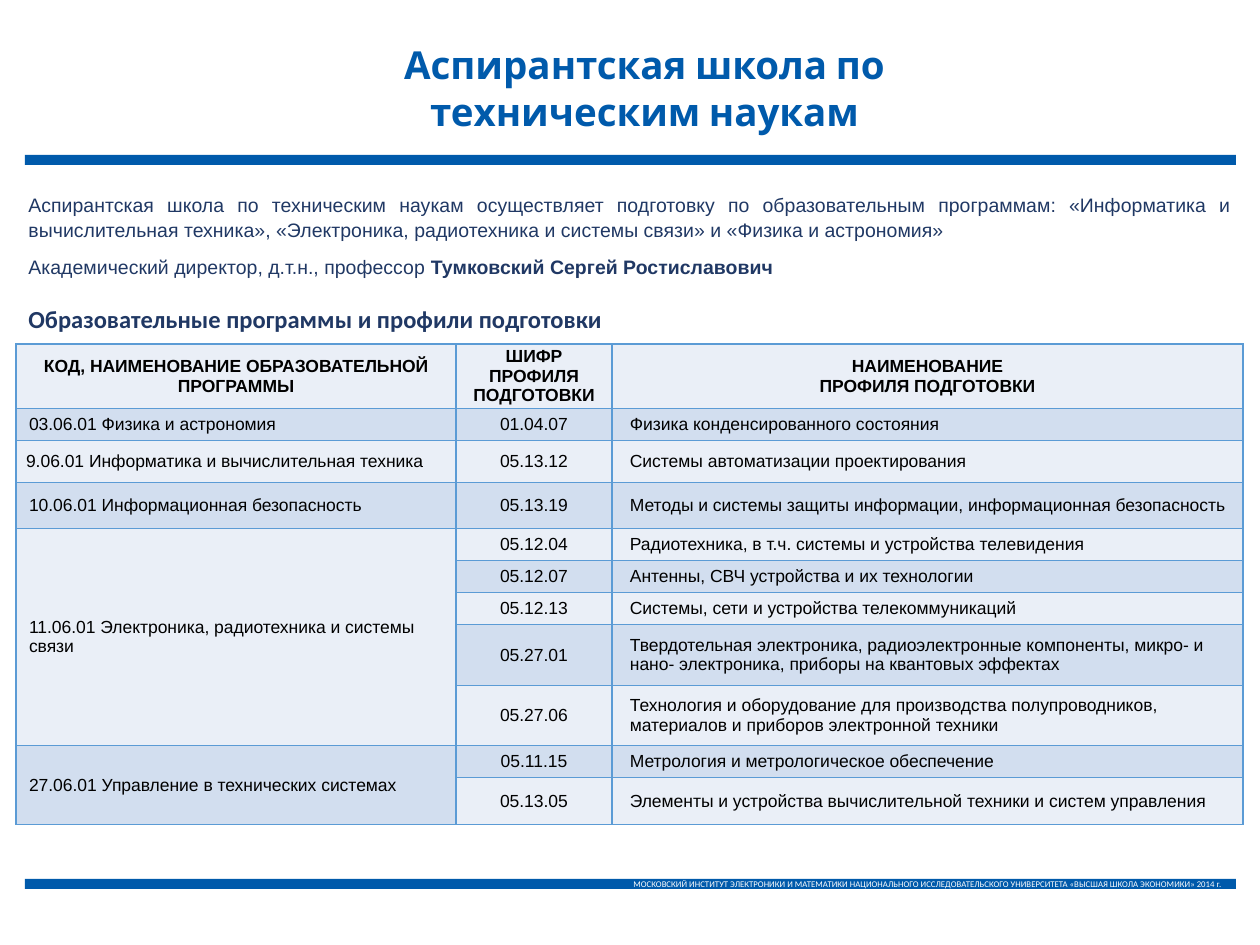
"""Build the slide on the postgraduate school of technical sciences."""
from copy import deepcopy
from dataclasses import dataclass

from lxml import etree
from pptx import Presentation
from pptx.dml.color import RGBColor
from pptx.enum.shapes import MSO_SHAPE
from pptx.enum.text import MSO_ANCHOR, MSO_AUTO_SIZE, PP_ALIGN
from pptx.oxml.ns import qn
from pptx.util import Emu, Pt

RECTANGLE = MSO_SHAPE.RECTANGLE
TOP, MIDDLE = MSO_ANCHOR.TOP, MSO_ANCHOR.MIDDLE
LEFT, CENTER, RIGHT, JUSTIFY = PP_ALIGN.LEFT, PP_ALIGN.CENTER, PP_ALIGN.RIGHT, PP_ALIGN.JUSTIFY
FIXED = MSO_AUTO_SIZE.NONE
SCALE = 914400 / 126
TITLE_ONLY = 5


@dataclass(frozen=True)
class Theme:
    brand: str = "005AAB"
    ink: str = "203864"
    black: str = "000000"
    white: str = "FFFFFF"
    light: str = "EAEFF7"
    dark: str = "D2DEEF"
    border: str = "5B9BD5"
    sans: str = "Arial"
    heading: str = "Cabin"
    label: str = "Calibri"
    title_size: float = 22
    subtitle_size: float = 14
    intro_size: float = 11.1
    table_size: float = 10
    footer_size: float = 5


THEME = Theme()

TITLE = "Аспирантская школа по\nтехническим наукам"
INTRO = [
    [("Аспирантская школа по техническим наукам осуществляет подготовку по образовательным "
      "программам: «Информатика и вычислительная техника», «Электроника, радиотехника и "
      "системы связи» и «Физика и астрономия»", False)],
    [("Академический директор, д.т.н., профессор ", False),
     ("Тумковский Сергей Ростиславович", True)],
]
SUBTITLE = "Образовательные программы и профили подготовки"
FOOTER = ("МОСКОВСКИЙ ИНСТИТУТ ЭЛЕКТРОНИКИ И МАТЕМАТИКИ НАЦИОНАЛЬНОГО ИССЛЕДОВАТЕЛЬСКОГО "
          "УНИВЕРСИТЕТА «ВЫСШАЯ ШКОЛА ЭКОНОМИКИ» 2014 г.")
HEADERS = [
    ["КОД, НАИМЕНОВАНИЕ ОБРАЗОВАТЕЛЬНОЙ ПРОГРАММЫ"],
    ["ШИФР ПРОФИЛЯ ПОДГОТОВКИ"],
    ["НАИМЕНОВАНИЕ", "ПРОФИЛЯ ПОДГОТОВКИ"],
]
PROGRAMMES = [
    ("03.06.01 Физика и астрономия", 3, [
        ("01.04.07", "Физика конденсированного состояния", 32)]),
    ("9.06.01 Информатика и вычислительная техника", 0, [
        ("05.13.12", "Системы автоматизации проектирования", 42)]),
    ("10.06.01 Информационная безопасность", 3, [
        ("05.13.19", "Методы и системы защиты информации, информационная безопасность", 46)]),
    ("11.06.01 Электроника, радиотехника и системы связи", 3, [
        ("05.12.04", "Радиотехника, в т.ч. системы и устройства телевидения", 32),
        ("05.12.07", "Антенны, СВЧ устройства и их технологии", 32),
        ("05.12.13", "Системы, сети и устройства телекоммуникаций", 32),
        ("05.27.01", "Твердотельная электроника, радиоэлектронные компоненты, микро- и "
                     "нано- электроника, приборы на квантовых эффектах", 61),
        ("05.27.06", "Технология и оборудование для производства полупроводников, "
                     "материалов и приборов электронной техники", 60)]),
    ("27.06.01 Управление в технических системах", 3, [
        ("05.11.15", "Метрология и метрологическое обеспечение", 32),
        ("05.13.05", "Элементы и устройства вычислительной техники и систем управления", 47)]),
]
COLUMN_WIDTHS = [440, 156, 631]
HEADER_HEIGHT = 60


def px(value):
    """Turn px into EMU."""
    return Emu(round(value * SCALE))


def write(frame, paragraphs, size, font, color, bold=False, align=LEFT, indent=0,
          line_spacing=None, space_after=None):
    """Fill a text frame with paragraphs, each a string or a list of (text, bold) spans."""
    for index, content in enumerate(paragraphs):
        para = frame.paragraphs[0] if index == 0 else frame.add_paragraph()
        para.alignment = align
        if line_spacing:
            para.line_spacing = line_spacing
        if space_after:
            para.space_after = Pt(space_after)
        if indent:
            properties = para._p.get_or_add_pPr()
            properties.set("marL", str(px(indent)))
            properties.set("indent", "0")
        spans = [(content, bold)] if isinstance(content, str) else content
        for text, strong in spans:
            for line_number, line in enumerate(text.split("\n")):
                if line_number:
                    para.add_line_break()
                span = para.add_run()
                span.text = line
                span.font.size = Pt(size)
                span.font.name = font
                span.font.bold = strong
                span.font.color.rgb = RGBColor.from_string(color)
        for line_break in para._p.findall(qn("a:br")):
            line_break.append(deepcopy(para.runs[0]._r.rPr))


def set_frame(frame, anchor=TOP, wrap=True):
    """Fix the size, anchor and wrapping of a text frame."""
    frame.auto_size = FIXED
    frame.vertical_anchor = anchor
    frame.word_wrap = wrap
    return frame


def place(shape, left, top, width, height):
    """Move and size a shape given px."""
    shape.left, shape.top, shape.width, shape.height = map(px, (left, top, width, height))


def add_text(page, bounds, paragraphs, anchor=TOP, wrap=True, **style):
    """Add a text box."""
    box = page.shapes.add_textbox(*map(px, bounds))
    write(set_frame(box.text_frame, anchor, wrap), paragraphs, **style)


def add_bar(page, top):
    """Add a full-width brand bar."""
    bar = page.shapes.add_shape(RECTANGLE, px(25), px(top), px(1211), px(10))
    bar.shadow.inherit = False
    bar.fill.solid()
    bar.fill.fore_color.rgb = RGBColor.from_string(THEME.brand)
    bar.line.fill.background()
    return bar


def format_cell(cell, fill, inset=3):
    """Give a cell its borders, fill, insets and anchor."""
    properties = cell._tc.get_or_add_tcPr()
    for side in ("lnL", "lnR", "lnT", "lnB"):
        line = etree.SubElement(properties, qn(f"a:{side}"), w=str(Pt(1)))
        solid = etree.SubElement(line, qn("a:solidFill"))
        etree.SubElement(solid, qn("a:srgbClr"), val=THEME.border)
    cell.fill.solid()
    cell.fill.fore_color.rgb = RGBColor.from_string(fill)
    cell.margin_left = cell.margin_right = cell.margin_top = cell.margin_bottom = px(inset)
    cell.vertical_anchor = MIDDLE


def add_programme_table(page):
    """Add the table of programmes and their profiles."""
    heights = [HEADER_HEIGHT] + [profile[2] for _, _, profiles in PROGRAMMES for profile in profiles]
    bounds = map(px, (16, 344, sum(COLUMN_WIDTHS), sum(heights)))
    table = page.shapes.add_table(len(heights), len(COLUMN_WIDTHS), *bounds).table
    table.first_row = table.horz_banding = False
    for column, width in zip(table.columns, COLUMN_WIDTHS):
        column.width = px(width)
    for row, height in zip(table.rows, heights):
        row.height = px(height)
    style = dict(size=THEME.table_size, font=THEME.sans, color=THEME.black)
    for column, header in enumerate(HEADERS):
        cell = table.cell(0, column)
        format_cell(cell, THEME.light)
        write(cell.text_frame, header, bold=True, align=CENTER, **style)
    row = 1
    for programme, inset, profiles in PROGRAMMES:
        first = table.cell(row, 0)
        write(first.text_frame, [programme], indent=10, **style)
        if len(profiles) > 1:
            first.merge(table.cell(row + len(profiles) - 1, 0))
        for code, name, _ in profiles:
            fill = THEME.dark if row % 2 else THEME.light
            for column in range(len(COLUMN_WIDTHS)):
                format_cell(table.cell(row, column), fill, 3 if column else inset)
            write(table.cell(row, 1).text_frame, [code], align=CENTER, **style)
            write(table.cell(row, 2).text_frame, [name], indent=15, **style)
            row += 1


def main():
    """Build and save the deck."""
    deck = Presentation()
    deck.slide_width, deck.slide_height = px(1260), px(945)
    page = deck.slides.add_slide(deck.slide_layouts[TITLE_ONLY])
    title = page.shapes.title
    place(title, 193, 35, 903, 106)
    write(set_frame(title.text_frame), [TITLE], size=THEME.title_size, font=THEME.heading,
          color=THEME.brand, bold=True, align=CENTER)
    add_bar(page, 155)
    footer = set_frame(add_bar(page, 879).text_frame, MIDDLE)
    footer.margin_top = footer.margin_bottom = 0
    write(footer, [FOOTER], size=THEME.footer_size, font=THEME.label, color=THEME.white, align=RIGHT)
    add_text(page, (16, 185, 1227, 101), INTRO, size=THEME.intro_size, font=THEME.sans,
             color=THEME.ink, align=JUSTIFY, line_spacing=1.07, space_after=7.4)
    add_programme_table(page)
    add_text(page, (16, 291, 631, 56), [SUBTITLE], anchor=MIDDLE, size=THEME.subtitle_size,
             font=THEME.label, color=THEME.ink, bold=True)
    deck.save("out.pptx")


if __name__ == "__main__":
    main()
